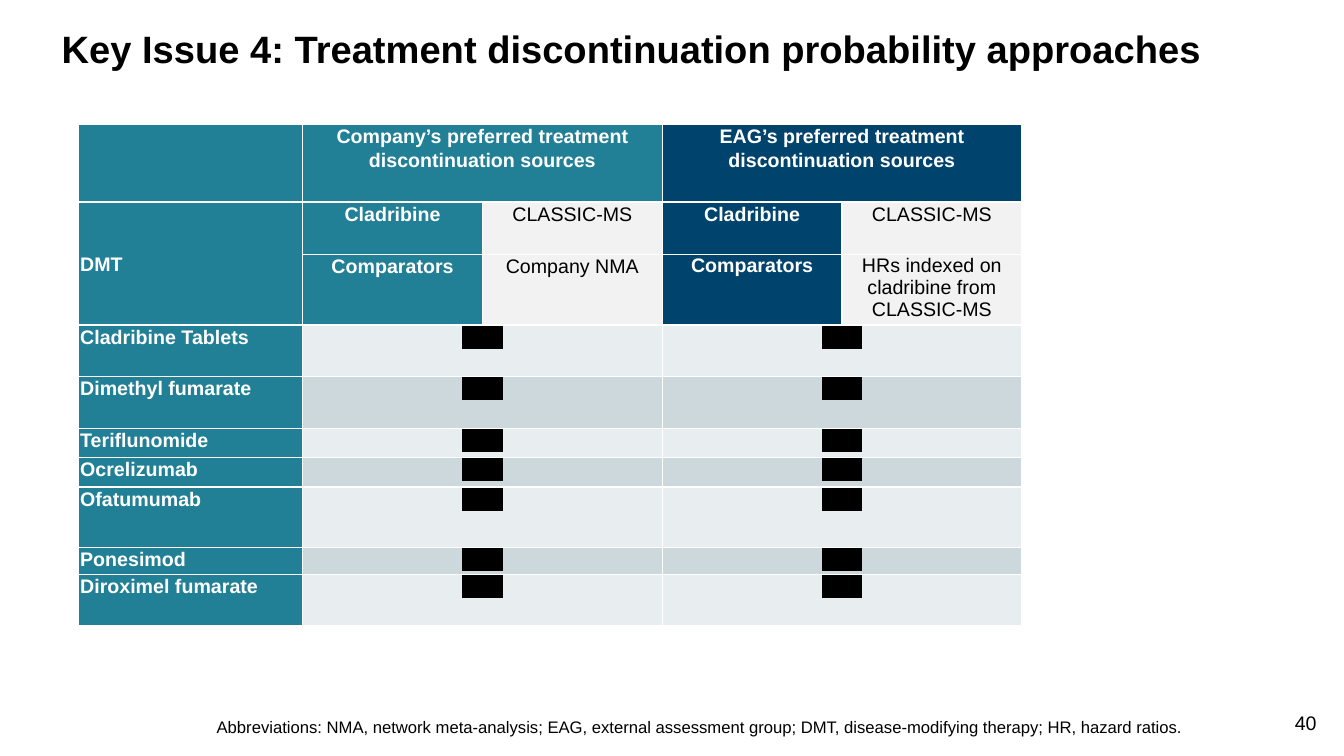
from lxml.etree import SubElement
from pptx import Presentation
from pptx.dml.color import RGBColor
from pptx.enum.text import MSO_ANCHOR as ANCHOR, PP_ALIGN as ALIGN
from pptx.oxml import parse_xml
from pptx.oxml.ns import nsdecls, qn
from pptx.util import Cm, Pt

TEAL, NAVY, GREY = "228096", "00436C", "F2F2F2"
BANDS = ["E8EDEF", "CDD8DD"]
WHITE, BLACK = "FFFFFF", "000000"


def rgb(value):
    return RGBColor.from_string(value)


def write(tf, text, size, color=BLACK, bold=False, align=ALIGN.LEFT, spacing=1.0, font="Arial"):
    tf.text = text
    tf.word_wrap = True
    p = tf.paragraphs[0]
    p.alignment = align
    p.line_spacing = spacing
    p.space_before = Pt(0)
    for r in p.runs:
        r.font.name = font
        r.font.size = Pt(size)
        r.font.bold = bold
        r.font.color.rgb = rgb(color)


prs = Presentation()
prs.slide_width, prs.slide_height = Cm(33.87), Cm(19.05)
s = prs.slides.add_slide(prs.slide_layouts[5])

title = s.shapes.title
title.left, title.top, title.width, title.height = Cm(1.3), Cm(0.74), Cm(31.24), Cm(1.65)
write(title.text_frame, "Key Issue 4: Treatment discontinuation probability approaches",
      27.2, bold=True, spacing=0.8)
title.text_frame.vertical_anchor = ANCHOR.TOP

footnote = s.shapes.add_textbox(Cm(5.21), Cm(18.03), Cm(25.25), Cm(1.02))
write(footnote.text_frame,
      "Abbreviations: NMA, network meta-analysis; EAG, external assessment group; "
      "DMT, disease-modifying therapy; HR, hazard ratios.", 11.9, spacing=0.8)

number = s.shapes.add_textbox(Cm(32.13), Cm(17.78), Cm(1.3), Cm(1.02))
write(number.text_frame, "40", 14, align=ALIGN.RIGHT)

treatments = ["Cladribine Tablets", "Dimethyl fumarate", "Teriflunomide", "Ocrelizumab",
              "Ofatumumab", "Ponesimod", "Diroximel fumarate"]
rows = [
    ["", "Company’s preferred treatment discontinuation sources", "",
     "EAG’s preferred treatment discontinuation sources", ""],
    ["DMT", "Cladribine", "CLASSIC-MS", "Cladribine", "CLASSIC-MS"],
    ["", "Comparators", "Company NMA", "Comparators", "HRs indexed on cladribine from CLASSIC-MS"],
] + [[name, "XXX", "", "XXX", ""] for name in treatments]
heights = [1.96, 1.32, 1.32, 1.3, 1.3, 0.74, 0.74, 1.53, 0.67, 1.3]
widths = [5.66] + [4.53] * 4

table = s.shapes.add_table(len(rows), len(widths), Cm(1.97), Cm(3.13),
                           Cm(sum(widths)), Cm(sum(heights))).table
for column, width in zip(table.columns, widths):
    column.width = Cm(width)
for row, height in zip(table.rows, heights):
    row.height = Cm(height)

for i, row in enumerate(rows):
    for j, text in enumerate(row):
        cell = table.cell(i, j)
        cell.margin_left = cell.margin_right = Cm(0.05)
        cell.margin_top = cell.margin_bottom = 0
        redacted = text == "XXX"
        heading = j == 0 or i == 0 or (i < 3 and j % 2 == 1)
        if j == 0:
            fill = TEAL
        elif i > 2:
            fill = BANDS[(i - 3) % 2]
        elif heading:
            fill = TEAL if j < 3 else NAVY
        else:
            fill = GREY
        cell.fill.solid()
        cell.fill.fore_color.rgb = rgb(fill)
        write(cell.text_frame, text, 14, WHITE if heading else BLACK, heading,
              ALIGN.CENTER if j else ALIGN.LEFT,
              1.0 if redacted or (i == 2 and j > 2) else 1.07,
              "Inter" if redacted else "Arial")
        if redacted:
            r = cell.text_frame.paragraphs[0].runs[0]
            r.font.underline = True
            highlight = parse_xml(f'<a:highlight {nsdecls("a")}><a:srgbClr val="{BLACK}"/></a:highlight>')
            r.font._element.find(qn("a:solidFill")).addnext(highlight)
        tcPr = cell._tc.get_or_add_tcPr()
        for k, side in enumerate(["lnL", "lnR", "lnT", "lnB"]):
            ln = parse_xml(f'<a:{side} {nsdecls("a")} w="12700"/>')
            SubElement(SubElement(ln, qn("a:solidFill")), qn("a:srgbClr")).set("val", WHITE)
            tcPr.insert(k, ln)

for i in [0, *range(3, len(rows))]:
    for j in (1, 3):
        table.cell(i, j).merge(table.cell(i, j + 1))
table.cell(1, 0).merge(table.cell(2, 0))
table.cell(1, 0).vertical_anchor = ANCHOR.MIDDLE

prs.save("out.pptx")
